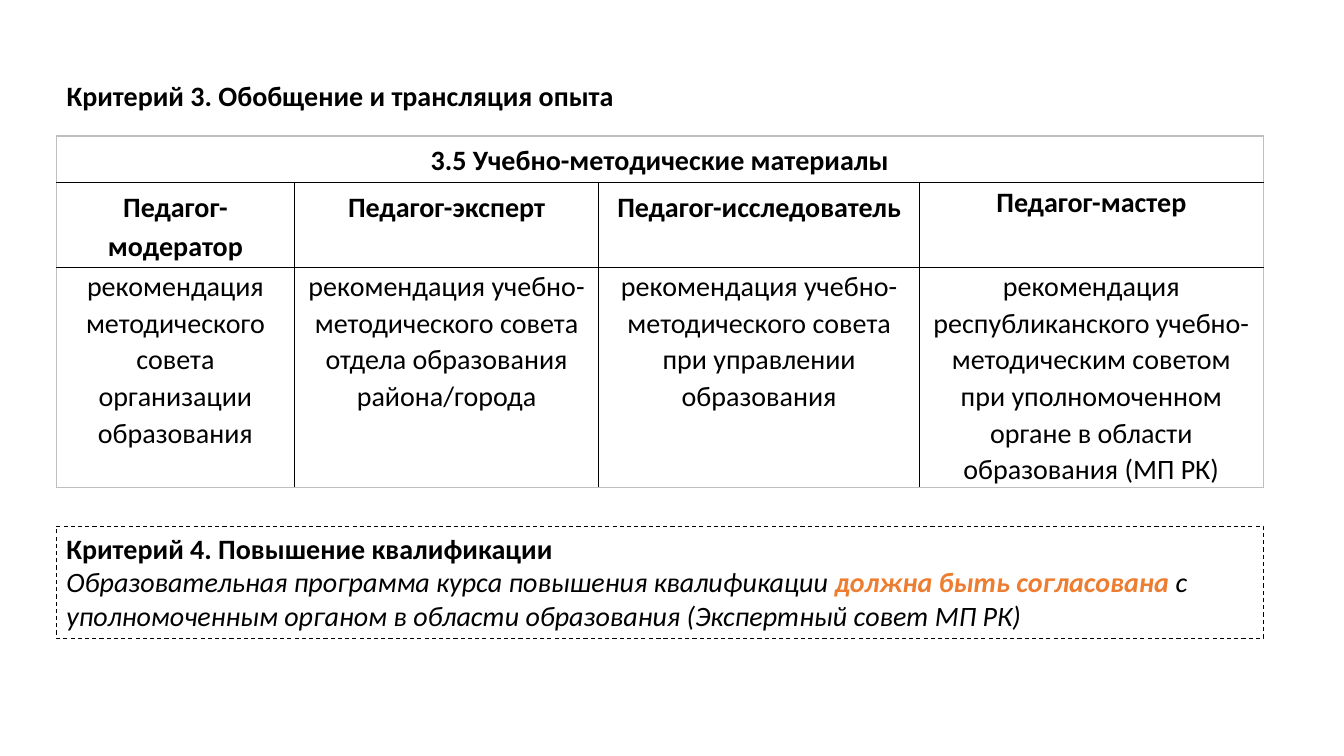
"""Build the slide on criteria 3 and 4 of teacher assessment."""
from dataclasses import dataclass

from lxml.etree import SubElement
from pptx import Presentation
from pptx.dml.color import RGBColor
from pptx.enum.dml import MSO_LINE
from pptx.enum.shapes import MSO_SHAPE
from pptx.enum.text import MSO_ANCHOR, MSO_AUTO_SIZE, PP_ALIGN
from pptx.oxml.ns import qn
from pptx.util import Inches, Pt

BLACK, ORANGE, GREY = "000000", "ED7D31", "BFBFBF"
LEFT, WIDTH = 0.56, 11.97
ROW_HEIGHTS = (0.46, 0.84, 2.18)


@dataclass
class Level:
    heading: str
    requirement: str
    width: float
    heading_spacing: float = 1.15


@dataclass
class Span:
    text: str
    bold: bool = False
    italic: bool = False
    color: str = BLACK


LEVELS = [
    Level("Педагог-\nмодератор",
          "рекомендация методического совета организации образования", 2.36),
    Level("Педагог-эксперт",
          "рекомендация учебно-методического совета отдела образования района/города", 3.02),
    Level("Педагог-исследователь",
          "рекомендация учебно-методического совета при управлении образования", 3.18),
    Level("Педагог-мастер",
          "рекомендация республиканского учебно-методическим советом при "
          "уполномоченном органе в области образования (МП РК)", 3.41, 1.0),
]

CRITERION_4 = [
    [Span("Критерий 4. Повышение квалификации", bold=True)],
    [Span("Образовательная программа курса повышения квалификации ", italic=True),
     Span("должна быть согласована ", bold=True, italic=True, color=ORANGE),
     Span("с уполномоченным органом в области образования (Экспертный совет МП РК)",
          italic=True)],
]


def rgb(color: str) -> RGBColor:
    return RGBColor.from_string(color)


def style(font, bold: bool = False, color: str = BLACK) -> None:
    font.name, font.size, font.bold = "Calibri", Pt(20), bold
    font.color.rgb = rgb(color)


def add_title(s) -> None:
    title = s.shapes.title
    title.left, title.top = Inches(LEFT), Inches(0.73)
    title.width, title.height = Inches(5.67), Inches(0.44)
    tf = title.text_frame
    tf.text = "Критерий 3. Обобщение и трансляция опыта"
    tf.word_wrap, tf.auto_size = False, MSO_AUTO_SIZE.NONE
    tf.vertical_anchor = MSO_ANCHOR.TOP
    p = tf.paragraphs[0]
    p.alignment = PP_ALIGN.LEFT
    style(p.font, bold=True)


def set_borders(cell, outer: set[str]) -> None:
    tc_pr = cell._tc.get_or_add_tcPr()
    for side in "LRTB":
        ln = SubElement(tc_pr, qn(f"a:ln{side}"), w=str(Pt(1)))
        fill = SubElement(ln, qn("a:solidFill"))
        SubElement(fill, qn("a:srgbClr"), val=GREY if side in outer else BLACK)


def fill_cell(cell, text: str, bold: bool, spacing: float) -> None:
    cell.text = text
    side, edge = (0.05, 0.03) if bold else (0.07, 0)
    cell.margin_left = cell.margin_right = Inches(side)
    cell.margin_top = cell.margin_bottom = Inches(edge)
    for p in cell.text_frame.paragraphs:
        p.alignment, p.line_spacing = PP_ALIGN.CENTER, spacing
        style(p.font, bold)


def add_levels_table(s) -> None:
    last = len(LEVELS) - 1
    table = s.shapes.add_table(
        len(ROW_HEIGHTS), len(LEVELS), Inches(LEFT), Inches(1.35),
        Inches(WIDTH), Inches(sum(ROW_HEIGHTS))).table
    table.first_row = table.horz_banding = False
    for row, height in zip(table.rows, ROW_HEIGHTS):
        row.height = Inches(height)
    for r in range(len(ROW_HEIGHTS)):
        for c in range(len(LEVELS)):
            outer = {"L"} if c == 0 else set()
            outer |= {"R"} if c == last else set()
            outer |= {"L", "R", "T"} if r == 0 else set()
            outer |= {"B"} if r == len(ROW_HEIGHTS) - 1 else set()
            set_borders(table.cell(r, c), outer)
            table.cell(r, c).fill.background()
    table.cell(0, 0).merge(table.cell(0, last))
    fill_cell(table.cell(0, 0), "3.5 Учебно-методические материалы", True, 1.15)
    for c, level in enumerate(LEVELS):
        table.columns[c].width = Inches(level.width)
        fill_cell(table.cell(1, c), level.heading, True, level.heading_spacing)
        fill_cell(table.cell(2, c), level.requirement, False, 1.07)


def add_criterion_box(s) -> None:
    sp = s.shapes.add_shape(MSO_SHAPE.RECTANGLE, Inches(LEFT), Inches(5.22),
                            Inches(WIDTH), Inches(1.11))
    sp.shadow.inherit = False
    sp.fill.background()
    sp.line.color.rgb = rgb(BLACK)
    sp.line.width, sp.line.dash_style = Pt(0.75), MSO_LINE.DASH
    tf = sp.text_frame
    tf.word_wrap, tf.vertical_anchor = True, MSO_ANCHOR.TOP
    for i, spans in enumerate(CRITERION_4):
        p = tf.add_paragraph() if i else tf.paragraphs[0]
        p.alignment = PP_ALIGN.LEFT
        for span in spans:
            r = p.add_run()
            r.text = span.text
            style(r.font, span.bold, span.color)
            r.font.italic = span.italic


def main() -> None:
    prs = Presentation()
    prs.slide_width, prs.slide_height = Inches(13.33), Inches(7.5)
    s = prs.slides.add_slide(prs.slide_layouts[5])
    add_title(s)
    add_levels_table(s)
    add_criterion_box(s)
    prs.save("out.pptx")


if __name__ == "__main__":
    main()
